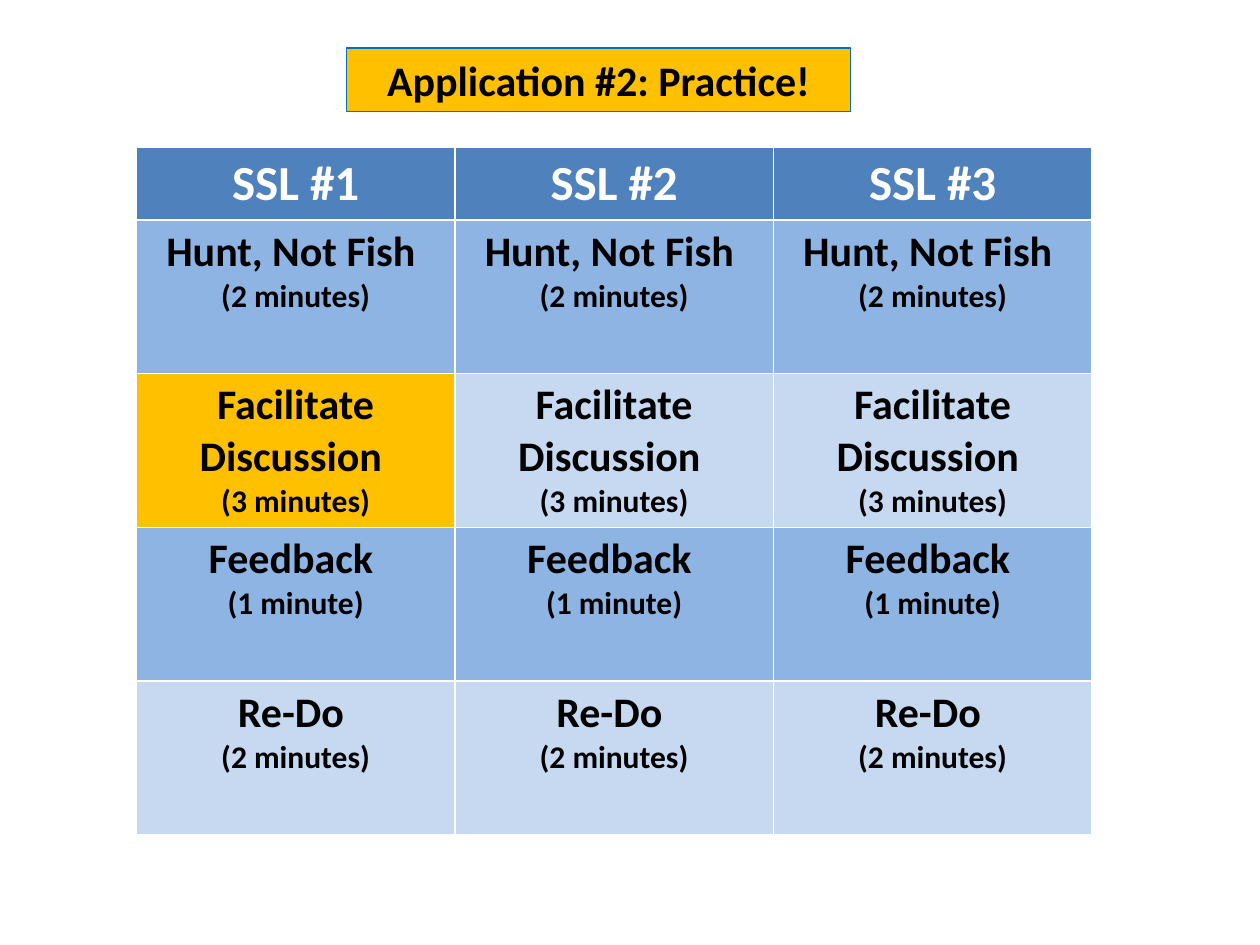
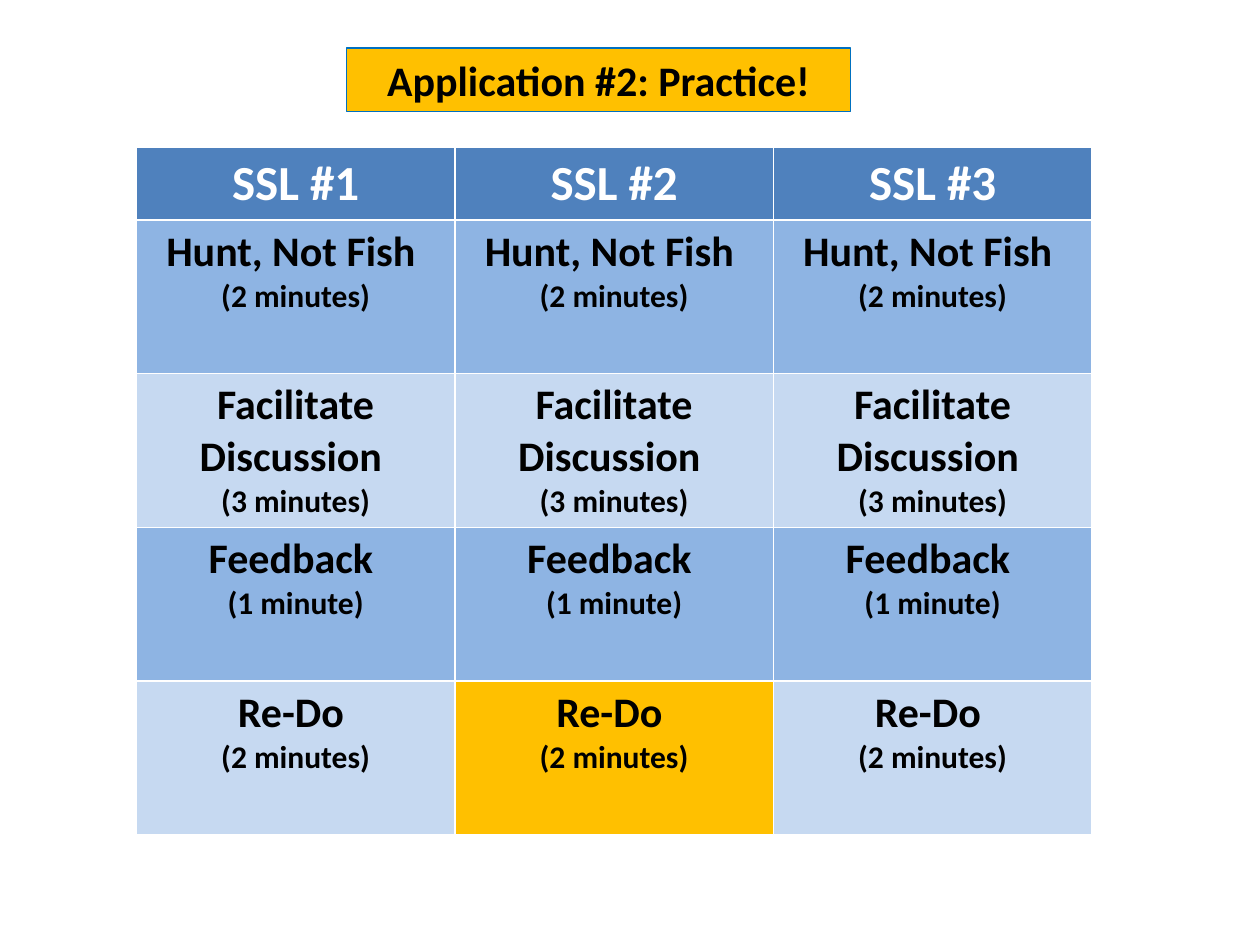
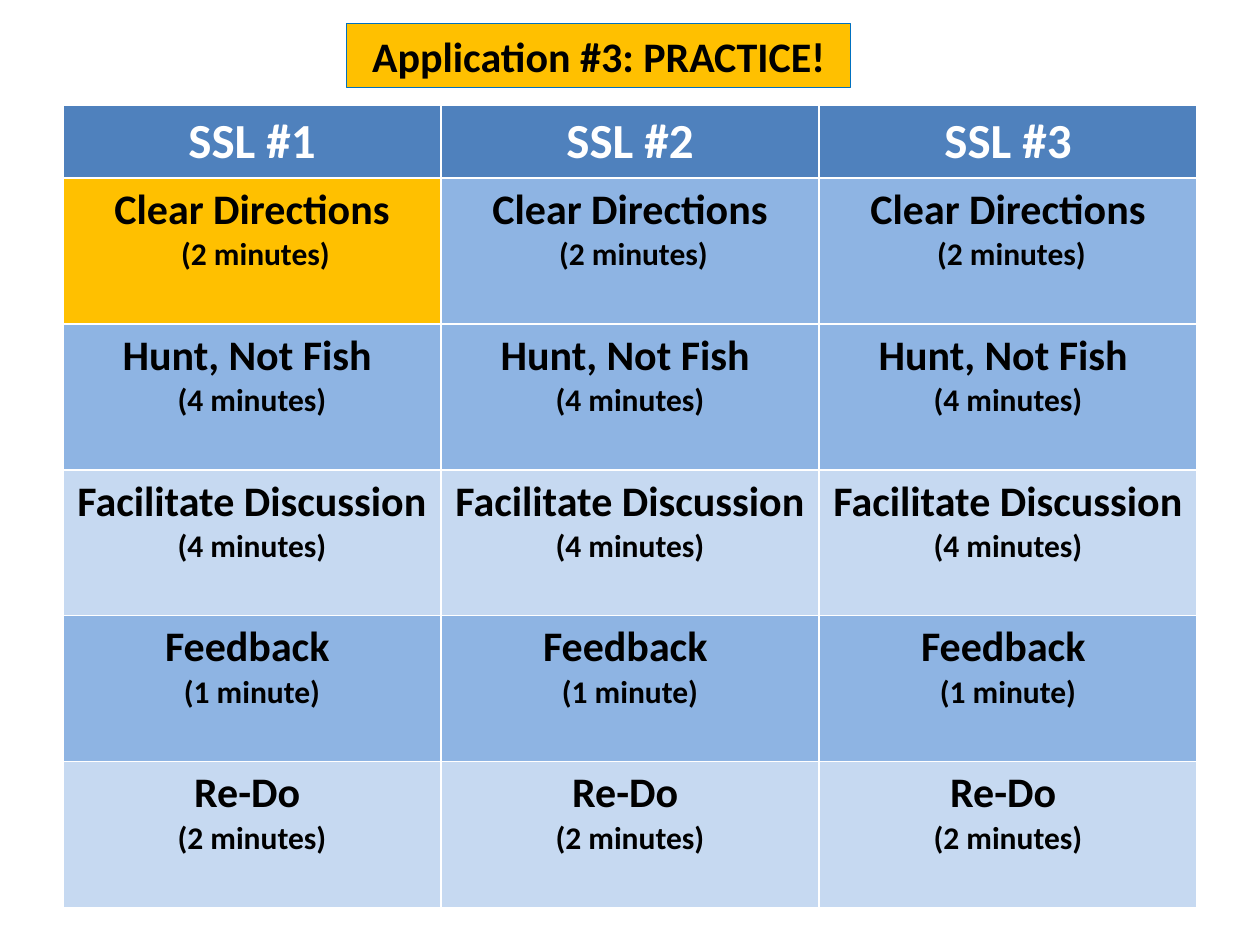
from pptx import Presentation
from pptx import util as u
from pptx.dml.color import RGBColor
from pptx.enum import text


def rgb(value):
    return RGBColor.from_string(value)


class Deck:
    FONT = "Calibri"
    BLACK, WHITE = "000000", "FFFFFF"
    GOLD, OUTLINE = "FFC000", "0070C0"
    HEADER, MID, PALE = "4F81BD", "8EB4E3", "C6D9F1"
    HEADINGS = ["SSL #1", "SSL #2", "SSL #3"]
    HEADER_HEIGHT = 1.42

    def __init__(self):
        self.prs = Presentation()
        self.prs.slide_width, self.prs.slide_height = u.Cm(25.4), u.Cm(19.05)

    def slide(self):
        self.s = self.prs.slides.add_slide(self.prs.slide_layouts[5])

    def paragraph(self, p, words, size, color):
        p.text = words
        p.alignment = text.PP_ALIGN.CENTER
        p.font.name, p.font.size, p.font.bold = self.FONT, u.Pt(size), True
        p.font.color.rgb = rgb(color)

    def title(self, words, top):
        sp = self.s.shapes.title
        sp.left, sp.top, sp.width, sp.height = map(u.Cm, (6.99, top, 10.16, 1.28))
        sp.fill.solid()
        sp.fill.fore_color.rgb = rgb(self.GOLD)
        sp.line.color.rgb = rgb(self.OUTLINE)
        sp.line.width = u.Pt(0.75)
        tf = sp.text_frame
        tf.auto_size = text.MSO_AUTO_SIZE.NONE
        tf.vertical_anchor = text.MSO_ANCHOR.MIDDLE
        self.paragraph(tf.paragraphs[0], words, 24, self.BLACK)

    def cell(self, cell, fill, lines):
        cell.fill.solid()
        cell.fill.fore_color.rgb = rgb(fill)
        tf = cell.text_frame
        for i, line in enumerate(lines):
            p = tf.add_paragraph() if i else tf.paragraphs[0]
            self.paragraph(p, *line)

    def schedule(self, steps, current, left, top, col_width, row_height):
        cols = len(self.HEADINGS)
        height = self.HEADER_HEIGHT + len(steps) * row_height
        box = map(u.Cm, (left, top, cols * col_width, height))
        table = self.s.shapes.add_table(len(steps) + 1, cols, *box).table
        for col in table.columns:
            col.width = u.Cm(col_width)
        for i, row in enumerate(table.rows):
            row.height = u.Cm(row_height if i else self.HEADER_HEIGHT)
        for c, heading in enumerate(self.HEADINGS):
            self.cell(table.cell(0, c), self.HEADER, [(heading, 28, self.WHITE)])
            for r, (step, minutes, fill) in enumerate(steps, 1):
                lines = [(step, 24, self.BLACK), (minutes, 18, self.BLACK)]
                self.cell(table.cell(r, c), self.GOLD if (r, c) == current else fill, lines)


def main():
    deck = Deck()
    closing = [("Feedback ", "(1 minute)", deck.MID),
               ("Re-Do ", "(2 minutes)", deck.PALE)]
    short_steps = [("Hunt, Not Fish ", "(2 minutes)", deck.MID),
                   ("Facilitate Discussion ", "(3 minutes)", deck.PALE)] + closing
    long_steps = [("Clear Directions", " (2 minutes)", deck.MID),
                  ("Hunt, Not Fish ", "(4 minutes)", deck.MID),
                  ("Facilitate Discussion ", "(4 minutes)", deck.PALE)] + closing

    for current in [(2, 0), (4, 1)]:
        deck.slide()
        deck.title("Application #2: Practice!", 0.97)
        deck.schedule(short_steps, current, 2.75, 2.97, 6.42, 3.1)

    deck.slide()
    deck.title("Application #3: PRACTICE!", 0.48)
    deck.schedule(long_steps, (1, 0), 1.27, 2.13, 7.62, 2.94)
    deck.prs.save("out.pptx")


if __name__ == "__main__":
    main()
